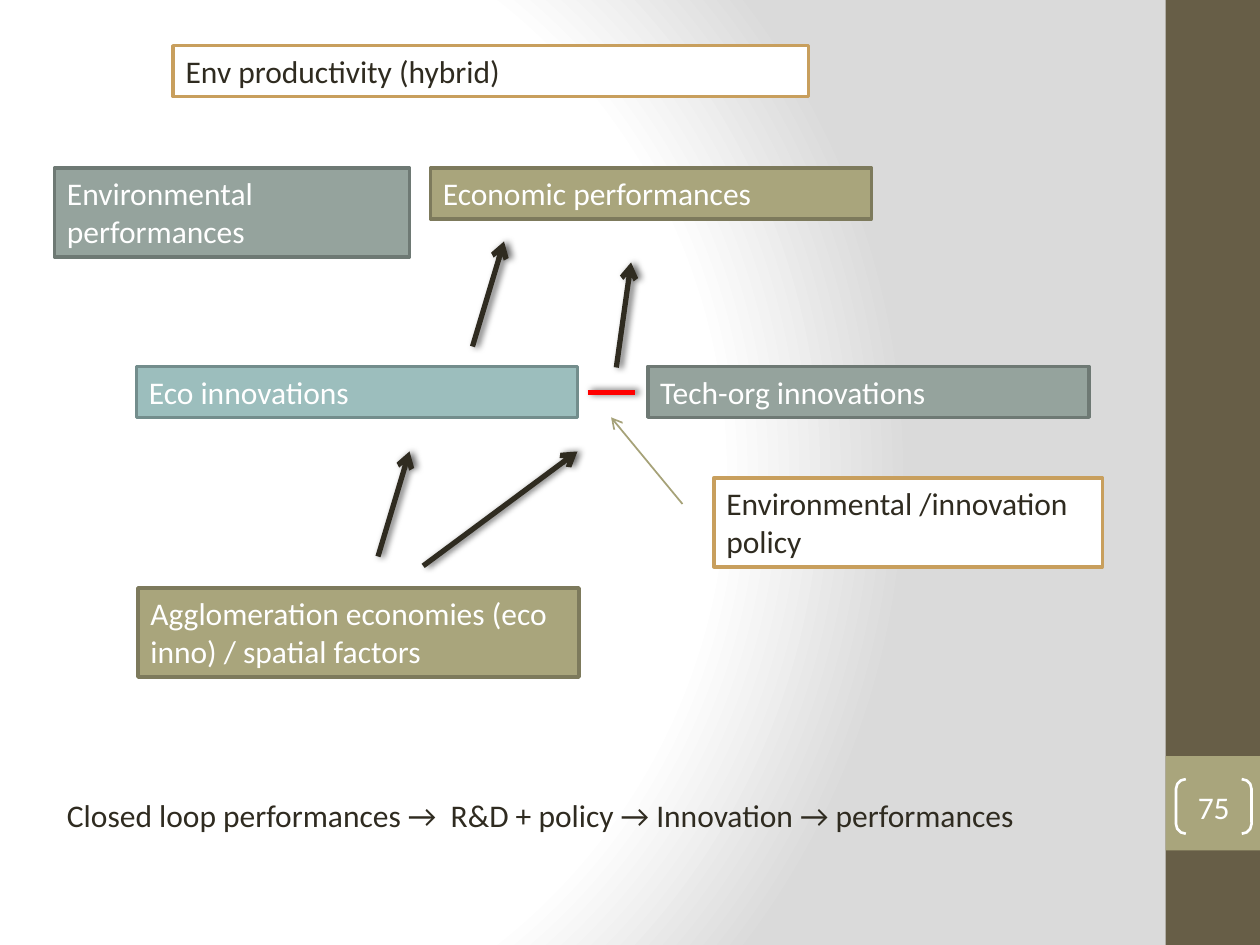
from lxml import etree
from pptx import Presentation
from pptx.dml.color import RGBColor
from pptx.enum.shapes import MSO_CONNECTOR, MSO_SHAPE
from pptx.enum.text import MSO_ANCHOR, MSO_AUTO_SIZE, PP_ALIGN
from pptx.oxml import parse_xml
from pptx.oxml.ns import nsdecls, qn
from pptx.util import Inches, Pt

RECT, BRACKETS = MSO_SHAPE.RECTANGLE, MSO_SHAPE.DOUBLE_BRACKET
STRAIGHT = MSO_CONNECTOR.STRAIGHT
TOP, MIDDLE = MSO_ANCHOR.TOP, MSO_ANCHOR.MIDDLE
LEFT, CENTER = PP_ALIGN.LEFT, PP_ALIGN.CENTER
GROW = MSO_AUTO_SIZE.SHAPE_TO_FIT_TEXT

COLORS = {
    "white": "FFFFFF", "ink": "2F2B20", "gray": "DADADA", "brown": "675E47",
    "olive": "A9A57C", "moss": "7D7A5C", "teal": "9CBEBD", "pine": "738D8C",
    "sage": "95A39D", "slate": "6E7974", "gold": "C89F5D", "khaki": "A6A278",
    "red": "FF0000", "black": "000000",
}
# Box styles: fill, outline, text
STYLES = {
    "olive": ("olive", "moss", "white"),
    "teal": ("teal", "pine", "white"),
    "sage": ("sage", "slate", "white"),
    "plain": ("white", "gold", "ink"),
}
COLS, ROWS = 120, 90  # square grid cells
ONE, TWO = 4.85, 8.48  # rows taken by one and two lines of text
WIDE = 42  # usual box width in columns


def rgb(name):
    return RGBColor.from_string(COLORS[name])


class Board:
    font, size = "Calibri", Pt(18)

    def __init__(self, deck):
        self.slide = deck.slides.add_slide(deck.slide_layouts[6])
        self.shapes = self.slide.shapes
        self.col = deck.slide_width / COLS
        self.row = deck.slide_height / ROWS

    def place(self, x, y, w, h):
        return (round(x * self.col), round(y * self.row),
                round(w * self.col), round(h * self.row))

    def backdrop(self):
        stops = "".join(
            f'<a:gs pos="{pos}000"><a:srgbClr val="{COLORS[name]}"/></a:gs>'
            for pos, name in ((0, "white"), (75, "white"), (100, "gray")))
        self.slide.element.cSld.insert(0, parse_xml(
            f'<p:bg {nsdecls("p", "a")}><p:bgPr><a:gradFill rotWithShape="1">'
            f'<a:gsLst>{stops}</a:gsLst><a:path path="circle">'
            '<a:fillToRect l="20000" t="50000" r="100000" b="50000"/>'
            '</a:path></a:gradFill><a:effectLst/></p:bgPr></p:bg>'))

    def fill_text(self, shape, text, color, align=LEFT, anchor=TOP):
        frame = shape.text_frame
        frame.word_wrap = True
        frame.vertical_anchor = anchor
        para = frame.paragraphs[0]
        para.text, para.alignment = text, align
        para.font.name, para.font.size = self.font, self.size
        para.font.color.rgb = rgb(color)
        return frame

    def shape(self, kind, area, fill=None, line=None, width=2):
        shape = self.shapes.add_shape(kind, *self.place(*area))
        shape.shadow.inherit = False
        if fill:
            shape.fill.solid()
            shape.fill.fore_color.rgb = rgb(fill)
        else:
            shape.fill.background()
        if line:
            shape.line.color.rgb = rgb(line)
            shape.line.width = Pt(width)
        else:
            shape.line.fill.background()
        return shape

    def box(self, text, style, *area):
        fill, line, color = STYLES[style]
        shape = self.shape(RECT, area, fill, line)
        self.fill_text(shape, text, color).auto_size = GROW

    def label(self, text, *area):
        shape = self.shapes.add_textbox(*self.place(*area))
        self.fill_text(shape, text, "ink").auto_size = GROW

    def number(self, text, *area):
        shape = self.shape(BRACKETS, area, line="white", width=1.5)
        shape.adjustments[0] = 0.18
        frame = self.fill_text(shape, text, "white", CENTER, MIDDLE)
        frame.margin_left = frame.margin_right = 0
        frame.margin_top = frame.margin_bottom = 0

    def line(self, start, end, color="ink", width=3, arrow=True, shadow=True):
        link = self.shapes.add_connector(
            STRAIGHT, *self.place(*start, *end))
        link.line.color.rgb = rgb(color)
        link.line.width = Pt(width)
        props = link.element.spPr
        if arrow:
            etree.SubElement(props.find(qn("a:ln")), qn("a:tailEnd"),
                             type="arrow")
        effects = etree.SubElement(props, qn("a:effectLst"))
        if shadow:
            outer = etree.SubElement(
                effects, qn("a:outerShdw"), blurRad=str(Pt(4)),
                dist=str(Pt(2)), dir="0", rotWithShape="0")
            tint = etree.SubElement(outer, qn("a:srgbClr"),
                                    val=COLORS["black"])
            etree.SubElement(tint, qn("a:alpha"), val="60000")


def main():
    deck = Presentation()
    deck.slide_width, deck.slide_height = Inches(10), Inches(7.5)
    board = Board(deck)

    # Background, side band and page number
    board.backdrop()
    board.shape(RECT, (111, 0, 9, ROWS), "brown")
    board.shape(RECT, (111, 72, 9, 9), "olive")
    board.number("75", 112, 74.2, 7.2, 5.2)

    # Performances
    board.box("Env productivity (hybrid)", "plain", 16.5, 4.35, 60.5, ONE)
    board.box("Environmental performances", "sage", 5.2, 16, 33.8, TWO)
    board.box("Economic performances", "olive", 41, 16, WIDE, ONE)

    # Innovations
    board.box("Eco innovations", "teal", 13, 34.9, WIDE, ONE)
    board.box("Tech-org innovations", "sage", 61.7, 34.9, WIDE, ONE)
    board.line((56, 37.35), (60.5, 37.35), "red", arrow=False)

    # Drivers
    board.box("Agglomeration economies (eco inno) / spatial factors",
              "olive", 13.15, 56, WIDE, TWO)
    board.box("Environmental /innovation policy", "plain",
              68, 45.5, 37, TWO)

    # Arrows
    for start, end in (((45, 33), (48, 23)), ((36, 53), (39, 43)),
                       ((58.7, 35), (60.1, 25)), ((40.3, 53.9), (55, 43))):
        board.line(start, end)
    board.line((65, 48), (58.2, 39.75), "khaki", 1, shadow=False)

    # Closing line
    board.label("Closed loop performances →  R&D + policy → Innovation"
                " → performances", 5.2, 75.2, 92.6, TWO)

    deck.save("out.pptx")


if __name__ == "__main__":
    main()
